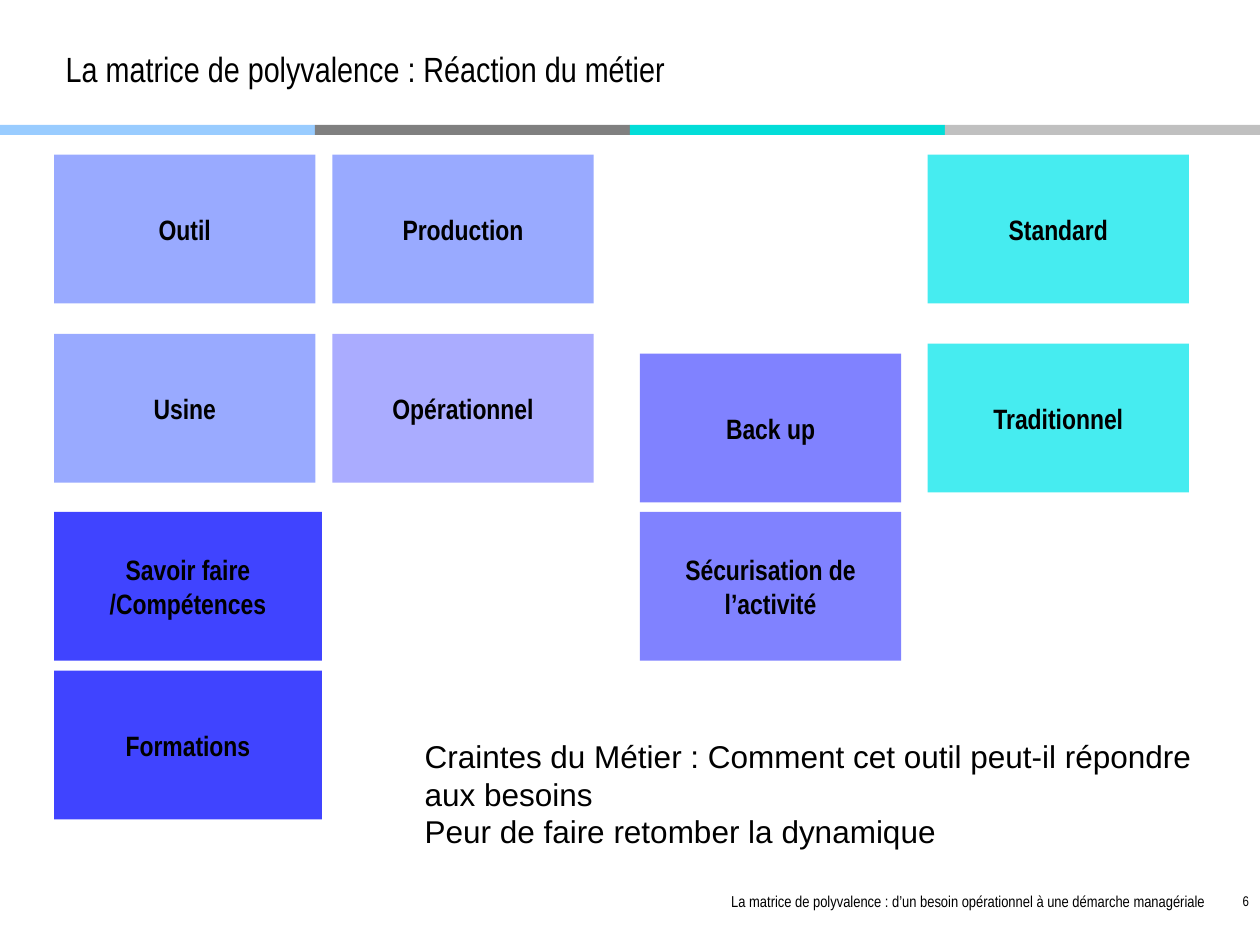
import dataclasses

import lxml.etree
import pptx
import pptx.dml.color
import pptx.enum.shapes
import pptx.enum.text
import pptx.oxml.ns
import pptx.util

Cm = pptx.util.Cm
ALIGN = pptx.enum.text.PP_ALIGN
ANCHOR = pptx.enum.text.MSO_ANCHOR
RECTANGLE = pptx.enum.shapes.MSO_SHAPE.RECTANGLE


@dataclasses.dataclass(frozen=True)
class Theme:
    text: str = "000000"
    stripes: tuple = ("99CCFF", "808080", "03DDD8", "C0C0C0")
    tool: str = "99AAFF"
    operational: str = "AAACFF"
    security: str = "8082FF"
    skills: str = "4044FF"
    standard: str = "46ECF0"
    narrow: str = "Arial Narrow"
    wide: str = "Arial"
    title_size: int = 20
    message_size: int = 18
    card_size: int = 16
    footer_size: int = 9
    number_size: int = 8


theme = Theme()


def add_run(paragraph, text, size, font_name, bold=False):
    run = paragraph.add_run()
    run.text = text
    run.font.size = pptx.util.Pt(size)
    run.font.name = font_name
    run.font.bold = bold
    run.font.color.rgb = pptx.dml.color.RGBColor.from_string(theme.text)


def paint(shape, color):
    shape.fill.solid()
    shape.fill.fore_color.rgb = pptx.dml.color.RGBColor.from_string(color)
    shape.line.fill.background()


presentation = pptx.Presentation()
presentation.slide_width = Cm(25.4)
presentation.slide_height = Cm(19.05)
slide = presentation.slides.add_slide(presentation.slide_layouts[1])

stripe_width = presentation.slide_width // len(theme.stripes)
for index, color in enumerate(theme.stripes):
    stripe = slide.shapes.add_shape(
        RECTANGLE, index * stripe_width, Cm(2.52), stripe_width, Cm(0.2))
    stripe.shadow.inherit = False
    paint(stripe, color)

title = slide.shapes.title
title.left, title.top, title.width, title.height = Cm(1.07), Cm(0.43), Cm(18.85), Cm(1.9)
title.text_frame.vertical_anchor = ANCHOR.MIDDLE
title.text_frame.auto_size = pptx.enum.text.MSO_AUTO_SIZE.NONE
paragraph = title.text_frame.paragraphs[0]
paragraph.alignment = ALIGN.LEFT
add_run(paragraph, "La matrice de polyvalence : Réaction du métier", theme.title_size, theme.narrow)

columns = (1.09, 6.7, 12.9, 18.7)
card_width, wide_card_width, card_height = 5.27, 5.4, 3
cards = (
    ("Outil", 0, 3.12, card_width, theme.tool),
    ("Production", 1, 3.12, card_width, theme.tool),
    ("Standard", 3, 3.12, card_width, theme.standard),
    ("Usine", 0, 6.73, card_width, theme.tool),
    ("Opérationnel", 1, 6.73, card_width, theme.operational),
    ("Back up", 2, 7.13, card_width, theme.security),
    ("Traditionnel", 3, 6.93, card_width, theme.standard),
    ("Savoir faire /Compétences", 0, 10.32, wide_card_width, theme.skills),
    ("Sécurisation de l’activité", 2, 10.32, card_width, theme.security),
    ("Formations", 0, 13.52, wide_card_width, theme.skills),
)
for text, column, top, width, color in cards:
    bounds = Cm(columns[column]), Cm(top), Cm(width), Cm(card_height)
    if text == "Opérationnel":
        card = slide.placeholders[1]
        card.left, card.top, card.width, card.height = bounds
    else:
        card = slide.shapes.add_shape(RECTANGLE, *bounds)
        card.shadow.inherit = False
    paint(card, color)
    card.text_frame.word_wrap = True
    card.text_frame.auto_size = pptx.enum.text.MSO_AUTO_SIZE.NONE
    card.text_frame.vertical_anchor = ANCHOR.MIDDLE
    paragraph = card.text_frame.paragraphs[0]
    if card.is_placeholder:
        properties = paragraph._p.get_or_add_pPr()
        properties.set("marL", "0")
        properties.set("indent", "0")
        lxml.etree.SubElement(properties, pptx.oxml.ns.qn("a:buNone"))
    paragraph.alignment = ALIGN.CENTER
    paragraph.space_before = pptx.util.Pt(0)
    add_run(paragraph, text, theme.card_size, theme.narrow, bold=True)

text_boxes = (
    ((8.31, 14.73, 16.51, 2.57), ALIGN.LEFT, theme.message_size, theme.wide,
     ("Craintes du Métier : Comment cet outil peut-il répondre aux besoins",
      "Peur de faire retomber la dynamique")),
    ((11.25, 17.86, 13.28, 0.64), ALIGN.RIGHT, theme.footer_size, theme.narrow,
     ("La matrice de polyvalence : d’un besoin opérationnel à une démarche managériale",)),
    ((24.59, 17.86, 0.84, 0.64), ALIGN.RIGHT, theme.number_size, theme.narrow, ("6",)),
)
for bounds, alignment, size, font_name, lines in text_boxes:
    text_box = slide.shapes.add_textbox(*map(Cm, bounds))
    text_frame = text_box.text_frame
    text_frame.word_wrap = True
    for index, line in enumerate(lines):
        paragraph = text_frame.add_paragraph() if index else text_frame.paragraphs[0]
        paragraph.alignment = alignment
        add_run(paragraph, line, size, font_name)

presentation.save("out.pptx")
